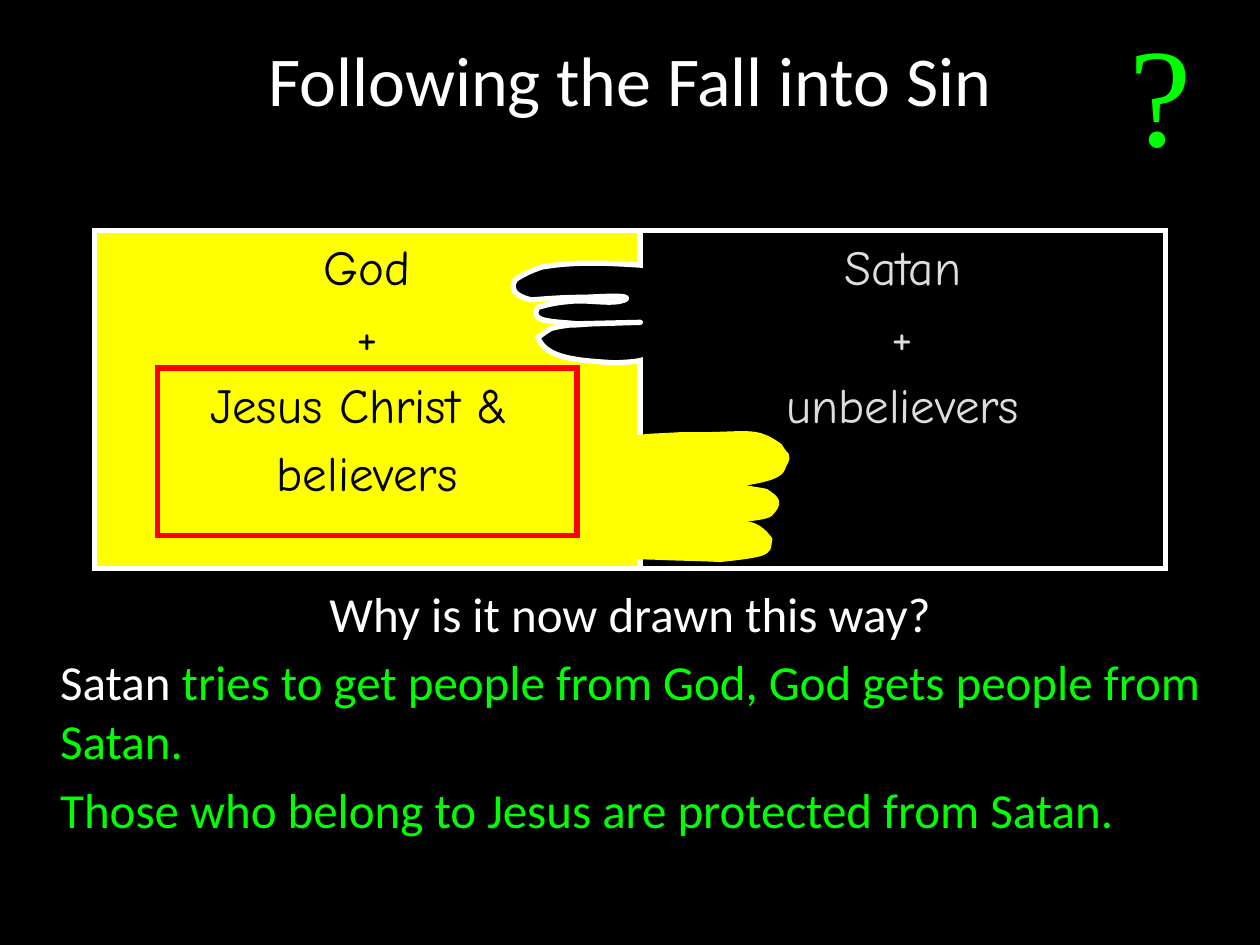
from lxml import etree
from pptx import Presentation
from pptx.dml.color import RGBColor
from pptx.enum import shapes, text
from pptx.oxml import ns
from pptx.util import Inches, Pt

BLACK = RGBColor(0x00, 0x00, 0x00)
WHITE = RGBColor(0xFF, 0xFF, 0xFF)
GRAY = RGBColor(0xDD, 0xDD, 0xDD)
YELLOW = RGBColor(0xFF, 0xFF, 0x00)
GREEN = RGBColor(0x00, 0xFF, 0x00)
RED = RGBColor(0xFF, 0x00, 0x00)

CENTER, LEFT = text.PP_ALIGN.CENTER, text.PP_ALIGN.LEFT
TOP, MIDDLE = text.MSO_ANCHOR.TOP, text.MSO_ANCHOR.MIDDLE

TITLE = [(CENTER, [("Following the Fall into Sin", WHITE)])]
MARK = [(CENTER, [("?", GREEN)])]
ANSWERS = [
    (CENTER, [("Why is it now drawn this way?", WHITE)]),
    (LEFT, [("Satan", WHITE),
            (" tries to get people from God, God gets people from Satan.", GREEN)]),
    (LEFT, [("Those who belong to Jesus are protected from Satan.", GREEN)]),
]
GOD_SIDE = ["God", "+", "Jesus Christ & ", "believers"]
SATAN_SIDE = ["Satan", "+", "unbelievers"]

SIDE_TOP, SIDE_HEIGHT = 1.83, 2.68
SIDES = [
    (0.75, 4.33, YELLOW, BLACK, GOD_SIDE),
    (5.08, 4.17, BLACK, GRAY, SATAN_SIDE),
]

DARK_HAND = (5.16, 2.11), [
    (4.88, 2.09, 4.58, 2.07, 4.3, 2.12), (4.21, 2.15, 4.15, 2.18, 4.09, 2.22),
    (4.05, 2.29, 4.08, 2.35, 4.22, 2.38), (4.35, 2.37, 4.48, 2.36, 4.6, 2.36),
    (4.72, 2.36, 5.04, 2.33, 4.96, 2.38), (4.86, 2.42, 4.69, 2.38, 4.55, 2.39),
    (4.43, 2.4, 4.37, 2.41, 4.27, 2.44), (4.19, 2.56, 4.4, 2.55, 4.58, 2.57),
    (5.45, 2.55, 4.98, 2.56, 4.73, 2.57), (4.66, 2.57, 4.59, 2.58, 4.52, 2.58),
    (4.51, 2.58, 4.38, 2.6, 4.37, 2.61), (4.33, 2.63, 4.27, 2.68, 4.27, 2.68),
    (4.34, 2.85, 4.59, 2.86, 4.88, 2.88), (5.06, 2.87, 5.12, 2.87, 5.21, 2.8),
    (5.25, 2.74, 5.27, 2.69, 5.29, 2.62), (5.28, 2.51, 5.28, 2.41, 5.26, 2.3),
    (5.25, 2.22, 5.16, 2.18, 5.16, 2.11),
]
BRIGHT_HAND = (4.86, 3.5), [
    (5.25, 3.45, 5.07, 3.47, 5.41, 3.45), (5.94, 3.46, 5.98, 3.39, 6.19, 3.54),
    (6.2, 3.56, 6.22, 3.59, 6.24, 3.61), (6.26, 3.65, 6.22, 3.68, 6.21, 3.72),
    (6.18, 3.81, 5.9, 3.83, 5.75, 3.86), (5.49, 3.85, 5.24, 3.86, 4.99, 3.85),
    (4.95, 3.84, 5.08, 3.83, 5.12, 3.83), (5.3, 3.83, 5.47, 3.84, 5.64, 3.85),
    (5.8, 3.86, 5.93, 3.87, 6.08, 3.9), (6.17, 3.96, 6.2, 3.99, 6.11, 4.08),
    (6.07, 4.11, 5.89, 4.12, 5.82, 4.13), (5.62, 4.13, 5.41, 4.12, 5.2, 4.12),
    (5.15, 4.12, 5.3, 4.13, 5.36, 4.13), (5.51, 4.14, 5.62, 4.15, 5.77, 4.15),
    (5.85, 4.16, 5.95, 4.15, 6, 4.18), (6.06, 4.21, 6.11, 4.28, 6.11, 4.28),
    (6.1, 4.31, 6.11, 4.35, 6.08, 4.37), (6.05, 4.41, 5.79, 4.43, 5.72, 4.44),
    (5.54, 4.43, 5.36, 4.43, 5.17, 4.42), (5.08, 4.42, 4.99, 4.41, 4.89, 4.4),
    (4.85, 4.39, 4.76, 4.39, 4.76, 4.39), (4.7, 4.25, 4.72, 4.33, 4.76, 4.1),
    (4.78, 3.97, 4.81, 3.78, 4.97, 3.66), (4.95, 3.59, 4.96, 3.55, 4.86, 3.5),
]
UNITS_PER_INCH = 100


def write(shape, paragraphs, font, size, anchor=TOP, spaced=False):
    frame = shape.text_frame
    for name, value in {"word_wrap": True, "vertical_anchor": anchor}.items():
        setattr(frame, name, value)
    for index, (align, spans) in enumerate(paragraphs):
        para = frame.add_paragraph() if index else frame.paragraphs[0]
        para.alignment = align
        properties = para._p.get_or_add_pPr()
        if align == LEFT:
            properties.set("marL", str(Inches(0.38)))
        if spaced:
            before = etree.SubElement(properties, ns.qn("a:spcBef"))
            etree.SubElement(before, ns.qn("a:spcPct"), val="20000")
        for words, color in spans:
            span = para.add_run()
            span.text = words
            for name, value in {"name": font, "size": Pt(size)}.items():
                setattr(span.font, name, value)
            span.font.color.rgb = color


def add_text(page, place, *content, **options):
    box = page.shapes.add_textbox(*map(Inches, place))
    write(box, *content, **options)


def paint(shape, fill, line, width=3):
    shape.shadow.inherit = False
    if fill is None:
        shape.fill.background()
    else:
        shape.fill.solid()
        shape.fill.fore_color.rgb = fill
    shape.line.color.rgb = line
    shape.line.width = Pt(width)


def add_box(page, place, *colors):
    box = page.shapes.add_shape(shapes.MSO_SHAPE.RECTANGLE, *map(Inches, place))
    paint(box, *colors)
    outline = box.line._get_or_add_ln()
    etree.SubElement(outline, ns.qn("a:miter"), lim="800000")
    return box


def add_hand(page, outline, fill, line):
    start, curves = outline
    points = [tuple(round(value * UNITS_PER_INCH) for value in pair)
              for pair in [start] + [curve[i:i + 2] for curve in curves for i in (0, 2, 4)]]
    builder = page.shapes.build_freeform(*points[0], scale=Inches(1 / UNITS_PER_INCH))
    builder.add_line_segments(points[1:], close=True)
    hand = builder.convert_to_shape()
    segments = list(hand._element.iter(ns.qn("a:lnTo")))
    for first, second, third in zip(*[iter(segments)] * 3):
        first.tag = ns.qn("a:cubicBezTo")
        for segment in (second, third):
            first.append(segment[0])
            segment.getparent().remove(segment)
    paint(hand, fill, line)


def main():
    deck = Presentation()
    deck.slide_width, deck.slide_height = Inches(10), Inches(7.5)
    page = deck.slides.add_slide(deck.slide_layouts[6])
    page.background.fill.solid()
    page.background.fill.fore_color.rgb = BLACK

    add_text(page, (0, 0, 10, 1.25), TITLE, "Calibri", 40, anchor=MIDDLE)
    add_text(page, (0, 4.58, 10, 2.92), ANSWERS, "Calibri", 28, spaced=True)
    add_text(page, (8.42, 0, 1.58, 1.43), MARK, "Times New Roman", 80, anchor=MIDDLE)

    for left, width, fill, ink, lines in SIDES:
        side = add_box(page, (left, SIDE_TOP, width, SIDE_HEIGHT), fill, WHITE)
        write(side, [(CENTER, [(line, ink)]) for line in lines],
              "Comic Neue", 28, spaced=True)

    add_box(page, (1.25, 2.92, 3.33, 1.33), None, RED)
    add_hand(page, DARK_HAND, BLACK, WHITE)
    add_hand(page, BRIGHT_HAND, YELLOW, YELLOW)
    add_box(page, (5.11, 2.06, 0.42, 0.83), BLACK, BLACK, 0.75)
    deck.save("out.pptx")


if __name__ == "__main__":
    main()
